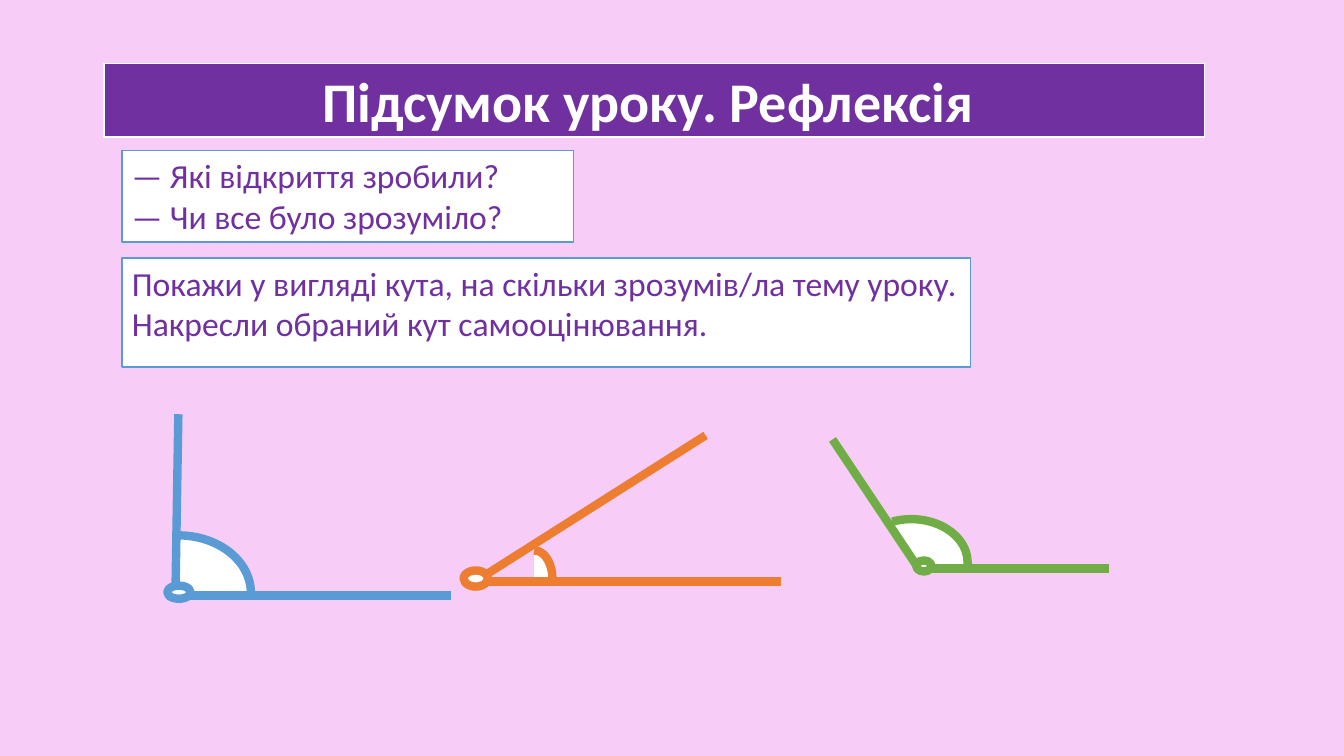
from lxml.etree import SubElement
from pptx import Presentation
from pptx.dml.color import RGBColor
from pptx.enum.shapes import MSO_CONNECTOR as CONN, MSO_SHAPE as SHAPE
from pptx.enum.text import MSO_ANCHOR as ANCHOR, MSO_AUTO_SIZE as AUTO, PP_ALIGN as ALIGN
from pptx.oxml.ns import qn
from pptx.util import Pt

PINK = RGBColor(0xF7, 0xCD, 0xF7)
PURPLE = RGBColor(0x70, 0x30, 0xA0)
WHITE = RGBColor(0xFF, 0xFF, 0xFF)
BLUE = RGBColor(0x5B, 0x9B, 0xD5)
ORANGE = RGBColor(0xED, 0x7D, 0x31)
GREEN = RGBColor(0x70, 0xAD, 0x47)


class LessonSlide:
    font = "Calibri"
    ray_width = 6

    def __init__(self, prs):
        self.s = prs.slides.add_slide(prs.slide_layouts[5])
        self.s.background.fill.solid()
        self.s.background.fill.fore_color.rgb = PINK

    def paint(self, sp, fill, line, width):
        sp.fill.solid()
        sp.fill.fore_color.rgb = fill
        sp.line.color.rgb = line
        sp.line.width = Pt(width)

    def label(self, sp, text, size, color, bold=False, align=ALIGN.LEFT, anchor=ANCHOR.TOP):
        tf = sp.text_frame
        tf.text = text
        tf.word_wrap = True
        tf.auto_size = AUTO.NONE
        tf.vertical_anchor = anchor
        for p in tf.paragraphs:
            p.alignment = align
            for r in p.runs:
                r.font.name = self.font
                r.font.size = Pt(size)
                r.font.bold = bold
                r.font.color.rgb = color

    def title(self, text, x, y, w, h):
        sp = self.s.shapes.title
        sp.left, sp.top, sp.width, sp.height = Pt(x), Pt(y), Pt(w), Pt(h)
        self.paint(sp, PURPLE, WHITE, 1)
        self.label(sp, text, 40, WHITE, True, ALIGN.CENTER, ANCHOR.MIDDLE)

    def box(self, text, x, y, w, h):
        sp = self.shape(self.s.shapes, SHAPE.RECTANGLE, x, y, w, h, BLUE, 1)
        self.label(sp, text, 24, PURPLE)

    def shape(self, shapes, kind, x, y, w, h, color, width):
        sp = shapes.add_shape(kind, Pt(x), Pt(y), Pt(w), Pt(h))
        sp.shadow.inherit = False
        self.paint(sp, WHITE, color, width)
        return sp

    def ray(self, shapes, x1, y1, x2, y2, color):
        ln = shapes.add_connector(CONN.STRAIGHT, Pt(x1), Pt(y1), Pt(x2), Pt(y2))
        ln.line.color.rgb = color
        ln.line.width = Pt(self.ray_width)
        SubElement(ln._element.spPr, qn("a:effectLst"))

    def angle(self, color, arc, rays, vertex, start=270, end=0):
        """arc is centre x, centre y, radius x, radius y; start and end are degrees."""
        shapes = self.s.shapes.add_group_shape().shapes
        cx, cy, rx, ry = arc
        sp = self.shape(shapes, SHAPE.ARC, cx - rx, cy - ry, 2 * rx, 2 * ry,
                        color, self.ray_width)
        # A degree is 60000 units, an adjustment step is 100000
        sp.adjustments[0] = start * 0.6
        sp.adjustments[1] = end * 0.6
        for ends in rays:
            self.ray(shapes, *ends, color)
        self.shape(shapes, SHAPE.OVAL, *vertex, color, self.ray_width)


def main():
    prs = Presentation()
    prs.slide_width, prs.slide_height = Pt(960), Pt(540)
    slide = LessonSlide(prs)

    # Heading and questions
    slide.title("Підсумок уроку. Рефлексія ", 74.2, 45.4, 786.2, 52.6)
    slide.box("— Які відкриття зробили?\n— Чи все було зрозуміло?", 87.1, 107.3, 322.6, 65.5)
    slide.box("Покажи у вигляді кута, на скільки зрозумів/ла тему уроку. "
              "Накресли обраний кут самооцінювання.", 87.1, 184.3, 606.2, 77.8)

    # Right, acute and obtuse angles
    slide.angle(BLUE, (127.4, 423.4, 51.8, 41),
                [(125.3, 426.2, 127.4, 295.9), (321.8, 425.5, 119.5, 425.5)],
                (119.5, 418.3, 16.6, 9.4))
    slide.angle(ORANGE, (381.6, 413.3, 13, 20.2),
                [(558, 415.4, 342.7, 415.4), (337, 416.9, 504, 311)],
                (331.2, 407.5, 17.3, 11.5))
    slide.angle(GREEN, (650.9, 401.8, 40.3, 31),
                [(656.6, 406.8, 594.7, 313.9), (656.6, 406.1, 792, 406.1)],
                (654.5, 400.3, 10.8, 7.9), start=245, end=4.5)

    prs.save("out.pptx")


if __name__ == "__main__":
    main()
